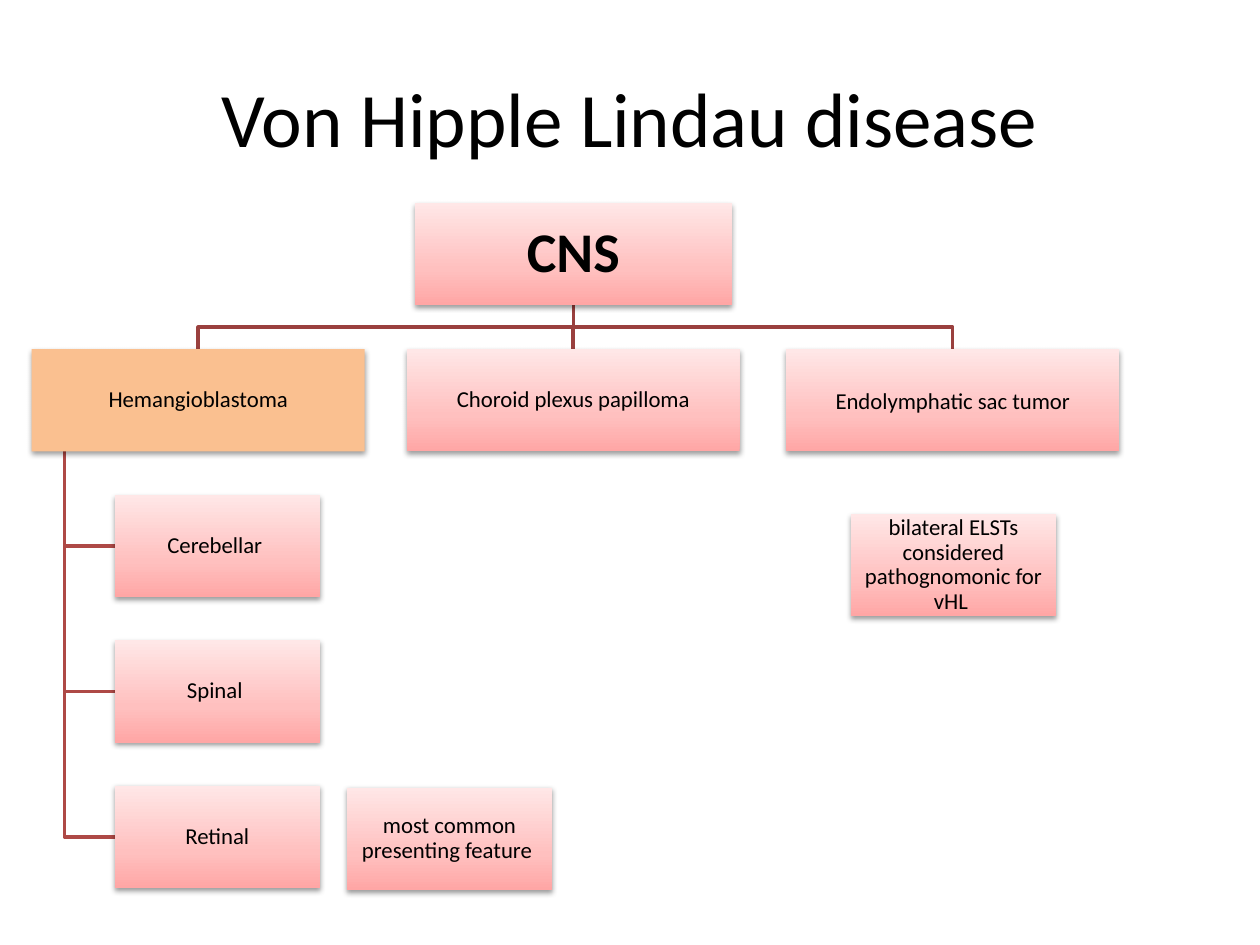
import copy

import pptx
import pptx.dml.color
import pptx.enum.shapes
import pptx.enum.text
import pptx.oxml
import pptx.oxml.ns
import pptx.util
from pptx.util import Cm

THEME = {
    "font": "Calibri",
    "text": "000000",
    "highlight": "FAC090",
    "gradient": [(0, "FFA6A5"), (0.35, "FFC0BF"), (1, "FFE7E7")],
    "branch": "9A403E",
    "twig": "AE4946",
    "line": 2,
    "title": 44,
    "root": 32,
    "node": 13,
}
SHADOW = (
    f'<a:outerShdw {pptx.oxml.ns.nsdecls("a")} blurRad="40000" dist="20000" '
    'dir="5400000" rotWithShape="0"><a:srgbClr val="000000">'
    '<a:alpha val="38000"/></a:srgbClr></a:outerShdw>'
)
rgb = pptx.dml.color.RGBColor.from_string

# Grid, in centimetres
BOX_H = 2.06
ROOT_LEFT, ROOT_TOP, ROOT_W = 8.36, 4.09, 6.4
BRANCH_TOP, BRANCH_W = 7.04, 6.71
LEAF_LEFT, LEAF_TOP, LEAF_W, LEAF_STEP = 2.31, 9.98, 4.14, 2.93
TRUNK_X = 1.3

root = ("CNS", ROOT_LEFT, ROOT_TOP, ROOT_W)
branches = [
    (text, left, BRANCH_TOP, BRANCH_W)
    for text, left in [
        ("Hemangioblastoma", 0.64),
        ("Choroid plexus papilloma", 8.2),
        ("Endolymphatic sac tumor", 15.85),
    ]
]
leaves = [
    (text, LEAF_LEFT, LEAF_TOP + row * LEAF_STEP, LEAF_W)
    for row, text in enumerate(["Cerebellar ", "Spinal ", "Retinal"])
]
remarks = [
    ("most common presenting feature ", 6.99, 15.88, LEAF_W),
    ("bilateral ELSTs considered pathognomonic for vHL ", 17.15, 10.36, LEAF_W),
]

deck = pptx.Presentation()
deck.slide_width, deck.slide_height = Cm(25.4), Cm(19.05)
slide = deck.slides.add_slide(deck.slide_layouts[6])


def write(holder, text, size, inset, spacing=1.0, bold=False):
    frame = holder.text_frame
    frame_format = {
        "word_wrap": True,
        "vertical_anchor": pptx.enum.text.MSO_ANCHOR.MIDDLE,
        **{f"margin_{side}": Cm(inset) for side in ("left", "right", "top", "bottom")},
    }
    for name, value in frame_format.items():
        setattr(frame, name, value)
    paragraph = frame.paragraphs[0]
    paragraph.alignment = pptx.enum.text.PP_ALIGN.CENTER
    paragraph.line_spacing = spacing
    run = paragraph.add_run()
    run.text = text
    font_format = {"name": THEME["font"], "size": pptx.util.Pt(size), "bold": bold}
    for name, value in font_format.items():
        setattr(run.font, name, value)
    run.font.color.rgb = rgb(THEME["text"])


def draw_link(points, color):
    """Draw an open angled line through points given in centimetres."""
    start, *rest = [(Cm(x), Cm(y)) for x, y in points]
    builder = slide.shapes.build_freeform(*start)
    builder.add_line_segments(rest, close=False)
    link = builder.convert_to_shape()
    link.shadow.inherit = False
    link.fill.background()
    link.line.color.rgb = rgb(color)
    link.line.width = pptx.util.Pt(THEME["line"])


title = slide.shapes.add_textbox(Cm(1.27), Cm(0.76), Cm(22.86), Cm(3.18))
write(title, "Von Hipple Lindau disease", THEME["title"], 0.2)

# Links lie behind the boxes
root_x, root_bottom = ROOT_LEFT + ROOT_W / 2, ROOT_TOP + BOX_H
fork_y = (root_bottom + BRANCH_TOP) / 2
for _, left, top, width in branches:
    branch_x = left + width / 2
    draw_link(
        [(root_x, root_bottom), (root_x, fork_y), (branch_x, fork_y), (branch_x, top)],
        THEME["branch"],
    )
for _, left, top, _ in leaves:
    leaf_y = top + BOX_H / 2
    draw_link(
        [(TRUNK_X, BRANCH_TOP + BOX_H), (TRUNK_X, leaf_y), (left, leaf_y)],
        THEME["twig"],
    )

for node in [root, *branches, *leaves, *remarks]:
    text, left, top, width = node
    box = slide.shapes.add_shape(
        pptx.enum.shapes.MSO_SHAPE.RECTANGLE, Cm(left), Cm(top), Cm(width), Cm(BOX_H)
    )
    box.line.fill.background()
    if node == branches[0]:
        box.fill.solid()
        box.fill.fore_color.rgb = rgb(THEME["highlight"])
    else:
        box.fill.gradient()
        box.fill.gradient_angle = 90
        stop_list = box.element.spPr.find(".//" + pptx.oxml.ns.qn("a:gsLst"))
        stop_list.append(copy.deepcopy(stop_list[0]))
        for stop, (position, color) in zip(box.fill.gradient_stops, THEME["gradient"]):
            stop.position = position
            stop.color.rgb = rgb(color)
    box.shadow.inherit = False
    effects = box.element.spPr.find(pptx.oxml.ns.qn("a:effectLst"))
    effects.append(pptx.oxml.parse_xml(SHADOW))
    is_root = node == root
    write(
        box,
        text,
        THEME["root" if is_root else "node"],
        0.05 if is_root else 0.03,
        spacing=1.0 if node == branches[-1] else 0.9,
        bold=is_root,
    )

deck.save("out.pptx")
